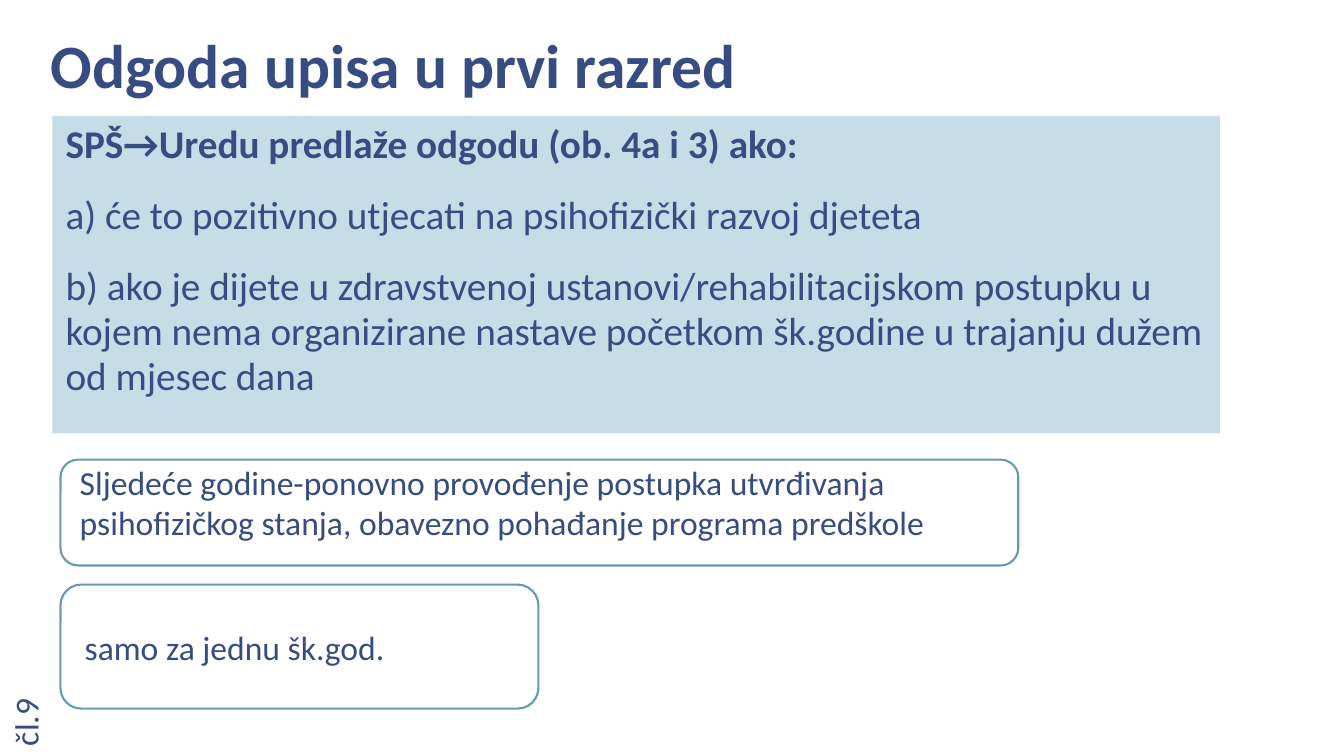
from pptx import Presentation
from pptx.dml.color import RGBColor
from pptx.enum.shapes import MSO_SHAPE
from pptx.enum.text import MSO_ANCHOR, MSO_AUTO_SIZE, PP_ALIGN
from pptx.oxml.ns import qn
from pptx.util import Pt

ROUND = MSO_SHAPE.ROUNDED_RECTANGLE
TOP, MIDDLE, BOTTOM = MSO_ANCHOR.TOP, MSO_ANCHOR.MIDDLE, MSO_ANCHOR.BOTTOM
LEFT = PP_ALIGN.LEFT
NO_FIT = MSO_AUTO_SIZE.NONE

PX = 9144  # 100 px to the inch
FONT = "Calibri"
INK, PANEL, EDGE, WHITE = "374C81", "C6DDE7", "669AB2", "FFFFFF"

TITLE = "Odgoda upisa u prvi razred"
REASONS = [
    "SPŠ→Uredu predlaže odgodu (ob. 4a i 3) ako:",
    "a) će to pozitivno utjecati na psihofizički razvoj djeteta",
    "b) ako je dijete u zdravstvenoj ustanovi/rehabilitacijskom postupku u "
    "kojem nema organizirane nastave početkom šk.godine u trajanju dužem "
    "od mjesec dana",
]
# text, box, insets (left, top, right, bottom)
NOTES = [
    ("Sljedeće godine-ponovno provođenje postupka utvrđivanja "
     "psihofizičkog stanja, obavezno pohađanje programa predškole",
     (60, 456, 950, 105), (14, 0, 14, 21)),
    ("samo za jednu šk.god.", (60, 580, 474, 123), (18, 14, 14, 14)),
]
ARTICLE = "čl.9"


def color(code):
    return RGBColor.from_string(code)


def place(shape, box):
    shape.left, shape.top, shape.width, shape.height = [n * PX for n in box]


def write(shape, lines, size, insets, anchor, space=1.0, gap=0, bold=False):
    """Fill a shape with left-aligned lines; bold applies to the first."""
    frame = shape.text_frame
    frame.text = "\n".join(lines)
    frame.word_wrap = True
    frame.auto_size = NO_FIT
    frame.vertical_anchor = anchor
    (frame.margin_left, frame.margin_top,
     frame.margin_right, frame.margin_bottom) = [n * PX for n in insets]
    for i, para in enumerate(frame.paragraphs):
        para.alignment = LEFT
        para.line_spacing = space
        para.space_before = Pt(gap if i else 0)
        for run in para.runs:
            run.font.name = FONT
            run.font.size = Pt(size)
            run.font.bold = bold and i == 0
            run.font.color.rgb = color(INK)


def unbullet(para):
    props = para._p.get_or_add_pPr()
    props.set("marL", "0")
    props.set("indent", "0")
    props.append(props.makeelement(qn("a:buNone"), {}))


def main():
    deck = Presentation()
    deck.slide_width, deck.slide_height = 1333 * PX, 750 * PX
    slide = deck.slides.add_slide(deck.slide_layouts[1])
    shapes = slide.shapes

    title, body = slide.placeholders
    place(title, (37, 8, 1296, 99))
    write(title, [TITLE], 44, (13, 7, 13, 7), BOTTOM, space=0.85, bold=True)

    place(body, (52, 115, 1158, 315))
    body.fill.solid()
    body.fill.fore_color.rgb = color(PANEL)
    write(body, REASONS, 28, (13, 7, 13, 7), TOP, 0.95, 18.7, True)
    for para in body.text_frame.paragraphs:
        unbullet(para)

    for text, box, insets in NOTES:
        note = shapes.add_shape(ROUND, *[n * PX for n in box])
        note.shadow.inherit = False
        note.fill.solid()
        note.fill.fore_color.rgb = color(WHITE)
        note.line.color.rgb = color(EDGE)
        note.line.width = Pt(1.5)
        write(note, [text], 24, insets, MIDDLE)

    label = shapes.add_textbox(*[n * PX for n in (-34, 666, 118, 50)])
    label.rotation = 270
    write(label, [ARTICLE], 24, (10, 5, 10, 5), TOP)

    deck.save("out.pptx")


if __name__ == "__main__":
    main()
